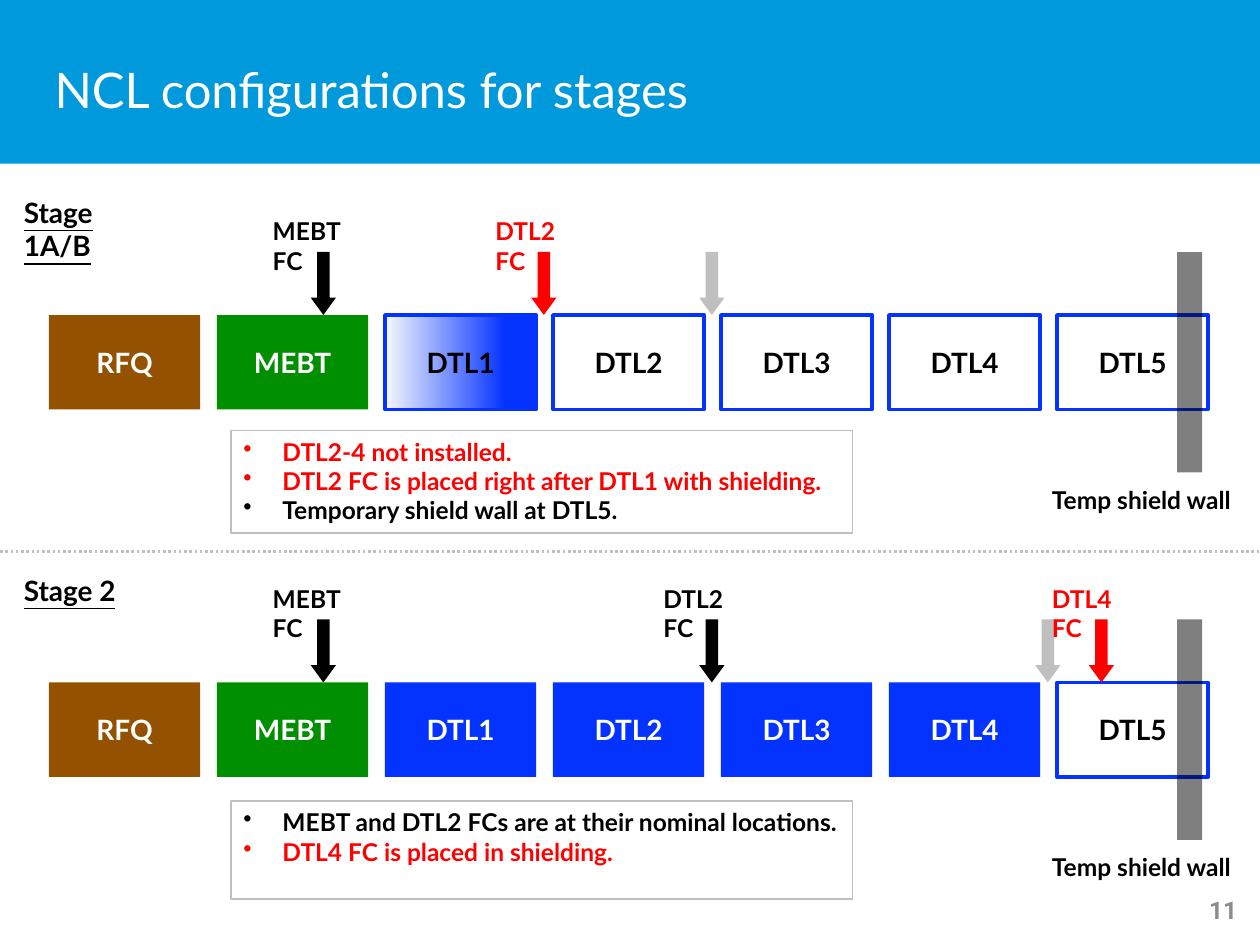
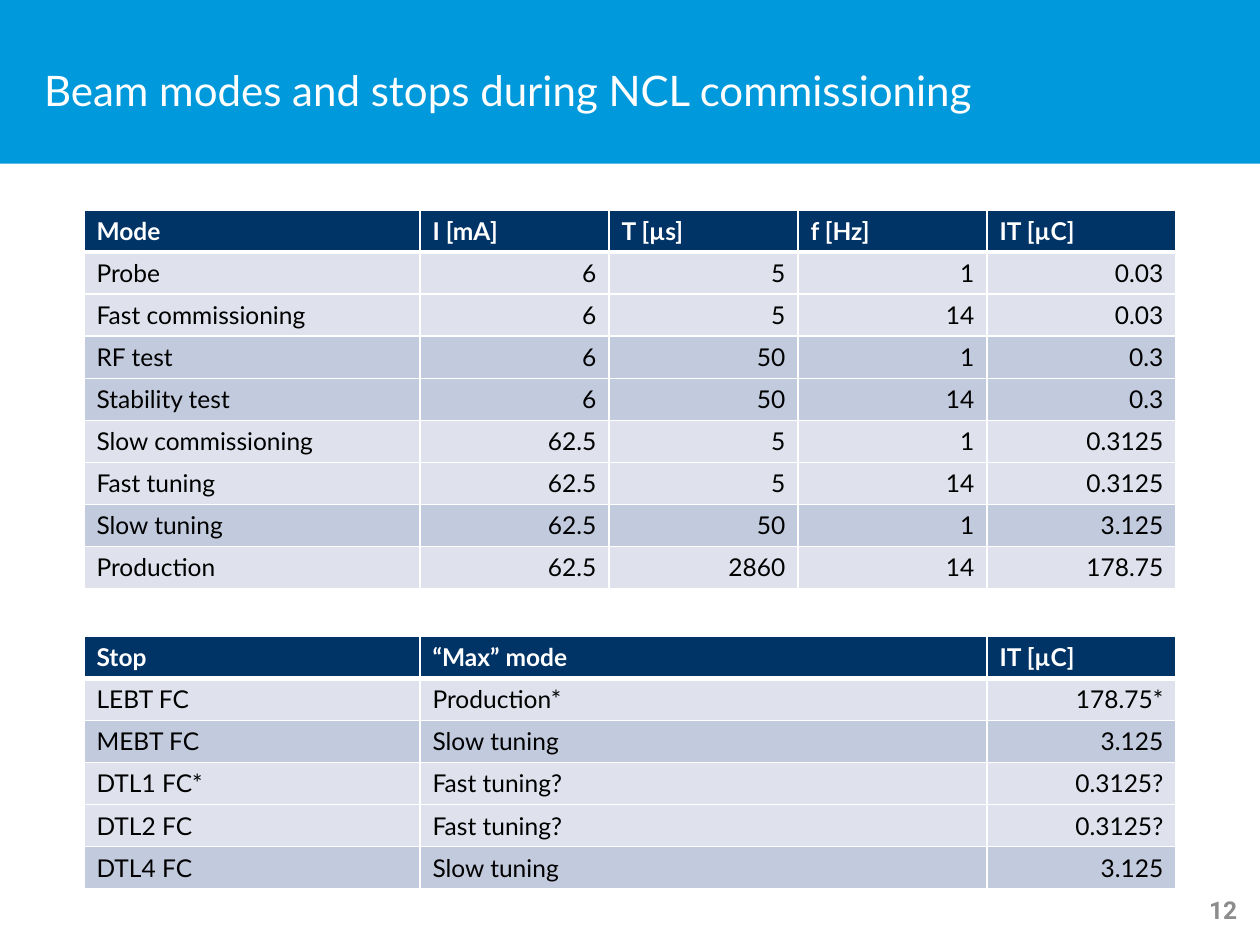
from dataclasses import dataclass

from lxml.etree import SubElement
from pptx import Presentation
from pptx.dml.color import RGBColor
from pptx.enum.dml import MSO_LINE
from pptx.enum.shapes import MSO_CONNECTOR, MSO_SHAPE
from pptx.enum.text import MSO_ANCHOR, PP_ALIGN
from pptx.oxml import parse_xml
from pptx.oxml.ns import nsdecls, qn
from pptx.util import Inches, Pt


@dataclass(frozen=True)
class Theme:
    font: str = "Lato"
    number_font: str = "Roboto"
    band: str = "0099DC"
    white: str = "FFFFFF"
    black: str = "000000"
    red: str = "FF0000"
    grey: str = "BFBFBF"
    number: str = "8C8C8C"
    rfq: str = "945200"
    mebt: str = "008F00"
    dtl: str = "0432FF"
    dtl_fade: str = "F6F9FC"
    table_head: str = "003366"
    row_light: str = "DFE2ED"
    row_dark: str = "C2CADD"
    body: int = 14
    heading: int = 16


theme = Theme()
prs = Presentation()
prs.slide_width, prs.slide_height = Inches(10), Inches(7.5)

# Grid: 120 columns by 90 rows
COL = prs.slide_width / 120
ROW = prs.slide_height / 90


def write(frame, lines, align=PP_ALIGN.LEFT, anchor=MSO_ANCHOR.TOP, bullet=None, **changes):
    """Fill a text frame with (text, colour) lines."""
    frame.word_wrap, frame.vertical_anchor = True, anchor
    style = {"name": theme.font, "size": Pt(theme.body), "bold": True, **changes}
    for index, (text, color) in enumerate(lines):
        paragraph = frame.add_paragraph() if index else frame.paragraphs[0]
        paragraph.alignment = align
        if bullet:
            properties = paragraph._p.get_or_add_pPr()
            properties.set("marL", str(Inches(0.31)))
            properties.set("indent", str(-Inches(0.31)))
            SubElement(properties, qn("a:buChar"), char=bullet)
        run = paragraph.add_run()
        run.text = text
        run.font.color.rgb = RGBColor.from_string(color)
        for name, value in style.items():
            setattr(run.font, name, value)


def draw(shapes, preset, left, top, width, height, fill=None, line=None, weight=2, alpha=None):
    """Add a preset shape placed in grid columns and rows."""
    shape = shapes.add_shape(preset, round(left * COL), round(top * ROW),
                             round(width * COL), round(height * ROW))
    shape.shadow.inherit = False
    if fill:
        shape.fill.solid()
        shape.fill.fore_color.rgb = RGBColor.from_string(fill)
    else:
        shape.fill.background()
    if alpha:
        color = shape.element.spPr.find(qn("a:solidFill"))[0]
        SubElement(color, qn("a:alpha"), val=str(alpha * 1000))
    if line:
        shape.line.color.rgb = RGBColor.from_string(line)
        shape.line.width = Pt(weight)
    else:
        shape.line.fill.background()
    return shape


# Shared parts: band on the layout, title and slide number on each slide
layout = prs.slide_layouts.get_by_name("Title Only")
slides = []
for title, number, title_left, title_size in [
    ("NCL configurations for stages", "11", 4, 28),
    ("Beam modes and stops during NCL commissioning", "12", 3, 24),
]:
    slide = prs.slides.add_slide(layout)
    if not slides:
        band = draw(slide.shapes, MSO_SHAPE.RECTANGLE, 0, 0, 120, 15.6, theme.band)
        layout.shapes.element.insert(2, band.element)
    heading = slide.shapes.title
    heading.left, heading.top = round(title_left * COL), round(2 * ROW)
    heading.width, heading.height = round(100 * COL), round(13 * ROW)
    write(heading.text_frame, [(title, theme.white)], anchor=MSO_ANCHOR.MIDDLE,
          size=Pt(title_size), bold=False)
    page = slide.shapes.add_textbox(round(91 * COL), round(84.25 * ROW),
                                    round(28 * COL), round(4.75 * ROW))
    write(page.text_frame, [(number, theme.number)], align=PP_ALIGN.RIGHT,
          anchor=MSO_ANCHOR.MIDDLE, name=theme.number_font)
    slides.append(slide)
config_slide, modes_slide = slides

# Stages: sections as (name, fill, outline, text colour), cups as (centre column, colour),
# labels as (text, left column, width, colour)
front_end = [("RFQ", theme.rfq, None, theme.white), ("MEBT", theme.mebt, None, theme.white)]
tanks = [f"DTL{n}" for n in range(1, 6)]
mebt_cup = (30.8, theme.black)
mebt_label = ("MEBT FC", 24.8, 11.8, theme.black)
stages = [
    {
        "name": "Stage 1A/B", "name_top": 18, "name_width": 15.6, "line_top": 30,
        "sections": front_end + [(tank, None, theme.dtl, theme.black) for tank in tanks],
        "cups": [mebt_cup, (51.8, theme.red), (67.8, theme.grey)],
        "labels": [mebt_label, ("DTL2 FC", 46, 11, theme.red)],
        "note_top": 41, "note_height": 9.75,
        "notes": [("DTL2-4 not installed.", theme.red),
                  ("DTL2 FC is placed right after DTL1 with shielding.", theme.red),
                  ("Temporary shield wall at DTL5.", theme.black)],
    },
    {
        "name": "Stage 2", "name_top": 54, "name_width": 11.5, "line_top": 65,
        "sections": front_end + [(tank, theme.dtl, None, theme.white) for tank in tanks[:4]]
        + [("DTL5", None, theme.dtl, theme.black)],
        "cups": [mebt_cup, (67.8, theme.black), (99.8, theme.grey), (104.9, theme.red)],
        "labels": [mebt_label, ("DTL2 FC", 62, 11, theme.black),
                   ("DTL4 FC", 99, 11, theme.red)],
        "note_top": 76.3, "note_height": 9.3,
        "notes": [("MEBT and DTL2 FCs are at their nominal locations.", theme.black),
                  ("DTL4 FC is placed in shielding.", theme.red)],
    },
]
shapes = config_slide.shapes
for stage in stages:
    line_top = stage["line_top"]

    # Accelerator sections
    for index, (name, fill, outline, color) in enumerate(stage["sections"]):
        section = draw(shapes, MSO_SHAPE.RECTANGLE, 4.67 + 16 * index, line_top, 14.4, 9,
                       fill, outline)
        if name == "DTL1" and not fill:
            section.fill.gradient()
            section.fill.gradient_angle = 0
            fade = [(0, theme.dtl_fade), (0.8, theme.dtl)]
            for stop, (position, shade) in zip(section.fill.gradient_stops, fade):
                stop.position = position
                stop.color.rgb = RGBColor.from_string(shade)
        write(section.text_frame, [(name, color)], align=PP_ALIGN.CENTER,
              anchor=MSO_ANCHOR.MIDDLE, size=Pt(theme.heading))

    # Faraday cup arrows and the shield wall
    for center, color in stage["cups"]:
        cup = draw(shapes, MSO_SHAPE.DOWN_ARROW, center - 1.2, line_top - 6, 2.4, 6, color)
        cup.adjustments[0], cup.adjustments[1] = 0.5, 0.685
    draw(shapes, MSO_SHAPE.RECTANGLE, 112.1, line_top - 6, 2.4, 21, theme.black, alpha=50)

    # Labels
    captions = [(text, left, line_top - 10, width, color, {})
                for text, left, width, color in stage["labels"]]
    captions += [
        ("Temp shield wall", 99, line_top + 15.6, 20, theme.black, {}),
        (stage["name"], 1.1, stage["name_top"], stage["name_width"], theme.black,
         {"size": Pt(theme.heading), "underline": True}),
    ]
    for text, left, top, width, color, changes in captions:
        caption = shapes.add_textbox(round(left * COL), round(top * ROW),
                                     round(width * COL), round(4.1 * ROW))
        write(caption.text_frame, [(text, color)], **changes)

    # Notes
    notes = draw(shapes, MSO_SHAPE.RECTANGLE, 22, stage["note_top"], 59.2,
                 stage["note_height"], line=theme.grey, weight=1)
    write(notes.text_frame, stage["notes"], bullet="•")

# Divider between the stages
divider_top = round(52.5 * ROW)
divider = shapes.add_connector(MSO_CONNECTOR.STRAIGHT, 0, divider_top,
                               prs.slide_width, divider_top)
divider.line.color.rgb = RGBColor.from_string(theme.grey)
divider.line.width = Pt(1.5)
divider.line.dash_style = MSO_LINE.ROUND_DOT
SubElement(divider.element.spPr, qn("a:effectLst"))

# Tables: top row, column widths, number of text columns, shaded rows, contents
beam_modes = [
    ("Mode", "I [mA]", "T [µs]", "f [Hz]", "IT [µC]"),
    ("Probe", "6", "5", "1", "0.03"),
    ("Fast commissioning", "6", "5", "14", "0.03"),
    ("RF test", "6", "50", "1", "0.3"),
    ("Stability test", "6", "50", "14", "0.3"),
    ("Slow commissioning", "62.5", "5", "1", "0.3125"),
    ("Fast tuning", "62.5", "5", "14", "0.3125"),
    ("Slow tuning", "62.5", "50", "1", "3.125"),
    ("Production", "62.5", "2860", "14", "178.75"),
]
beam_stops = [
    ("Stop", "“Max” mode", "IT [µC]"),
    ("LEBT FC", "Production*", "178.75*"),
    ("MEBT FC", "Slow tuning", "3.125"),
    ("DTL1 FC*", "Fast tuning?", "0.3125?"),
    ("DTL2 FC", "Fast tuning?", "0.3125?"),
    ("DTL4 FC", "Slow tuning", "3.125"),
]
for top, widths, text_columns, shaded, rows in [
    (20, [32, 18, 18, 18, 18], 1, {3, 4, 7}, beam_modes),
    (60.6, [32, 54, 18], 2, {2, 5}, beam_stops),
]:
    table = modes_slide.shapes.add_table(len(rows), len(widths), round(8 * COL),
                                         round(top * ROW), round(104 * COL),
                                         round(4 * len(rows) * ROW)).table
    for column, width in zip(table.columns, widths):
        column.width = round(width * COL)
    for r, row in enumerate(rows):
        table.rows[r].height = round(4 * ROW)
        row_fill = theme.row_dark if r in shaded else theme.row_light
        for c, text in enumerate(row):
            cell = table.cell(r, c)
            cell.fill.solid()
            cell.fill.fore_color.rgb = RGBColor.from_string(theme.table_head if r == 0 else row_fill)
            write(cell.text_frame, [(text, theme.black if r else theme.white)], bold=r == 0,
                  align=PP_ALIGN.RIGHT if r and c >= text_columns else PP_ALIGN.LEFT)
            borders = {"lnL": 1, "lnR": 1, "lnT": 3 if r == 1 else 1, "lnB": 1 if r else 3}
            for place, (side, weight) in enumerate(borders.items()):
                cell._tc.get_or_add_tcPr().insert(place, parse_xml(
                    f'<a:{side} {nsdecls("a")} w="{Pt(weight)}"><a:solidFill>'
                    f'<a:srgbClr val="{theme.white}"/></a:solidFill></a:{side}>'))

prs.save("out.pptx")
